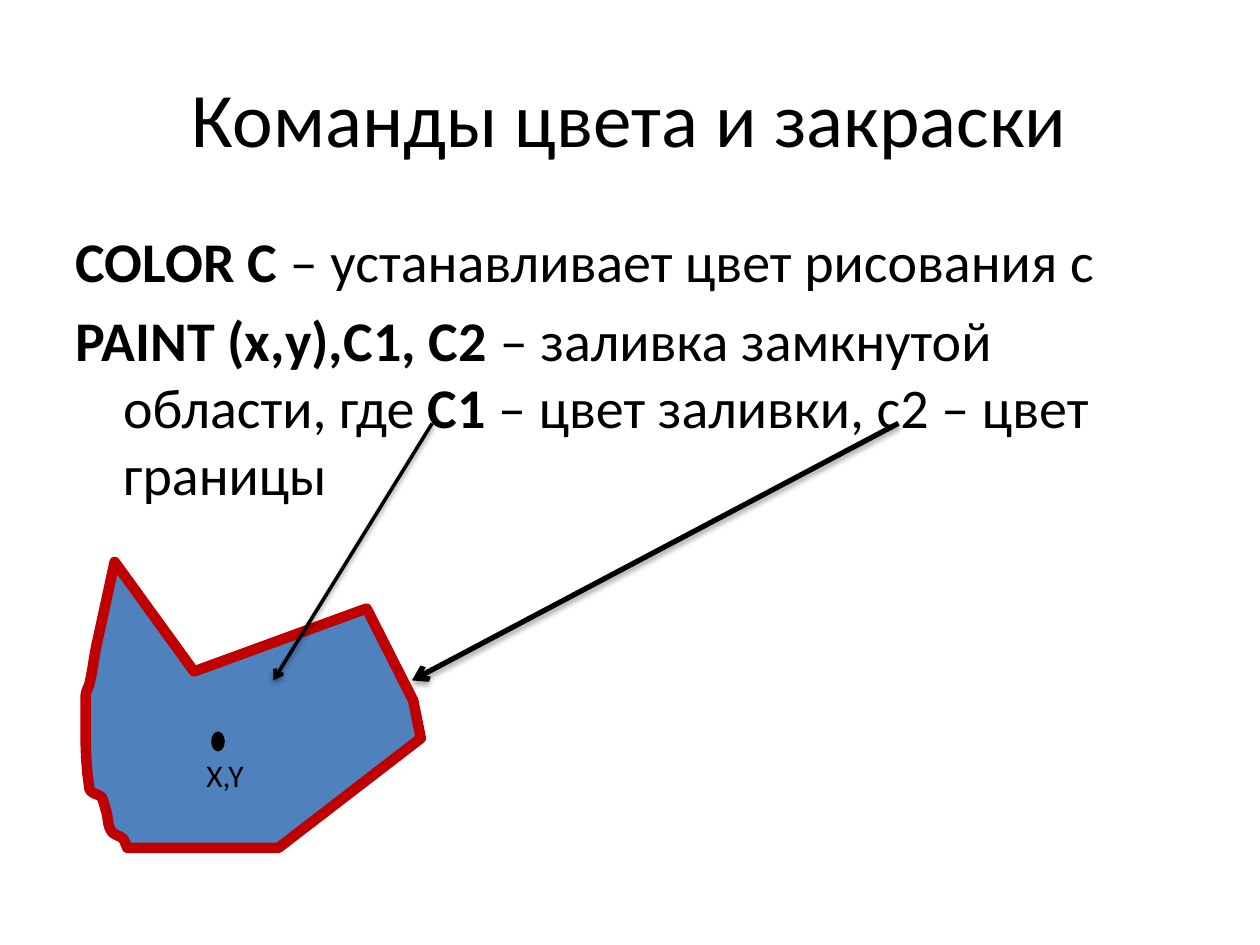
from lxml import etree
from pptx import Presentation
from pptx.dml.color import RGBColor
from pptx.enum.shapes import MSO_CONNECTOR, MSO_SHAPE
from pptx.enum.text import MSO_ANCHOR, PP_ALIGN
from pptx.oxml.ns import qn
from pptx.util import Inches, Pt

STRAIGHT = MSO_CONNECTOR.STRAIGHT
OVAL = MSO_SHAPE.OVAL
TOP, MIDDLE = MSO_ANCHOR.TOP, MSO_ANCHOR.MIDDLE
LEFT, CENTER = PP_ALIGN.LEFT, PP_ALIGN.CENTER

COLORS = {"ink": "000000", "area": "4F81BD", "border": "C00000"}
FONT = "Calibri"

TITLE = [[("Команды цвета и закраски", False)]]
COMMANDS = [
    [("COLOR C ", True), ("– устанавливает цвет рисования c", False)],
    [("PAINT (x,y),C1, C2 ", True), ("– заливка замкнутой области, где ", False),
     ("С1", True), (" – цвет заливки, c2 – цвет границы", False)],
]
POINT_LABEL = [[("X,Y", False)]]

AREA_START = (0.78, 5.06)
AREA_CURVES = [
    ((0.75, 5.18), (0.74, 5.3), (0.71, 5.43)),
    ((0.7, 5.46), (0.68, 5.49), (0.68, 5.53)),
    ((0.68, 5.77), (0.67, 6.02), (0.71, 6.26)),
    ((0.72, 6.3), (0.78, 6.3), (0.81, 6.33)),
    ((0.82, 6.36), (0.83, 6.39), (0.84, 6.43)),
    ((0.86, 6.48), (0.85, 6.54), (0.88, 6.59)),
    ((0.9, 6.63), (0.95, 6.63), (0.98, 6.66)),
    ((0.99, 6.68), (1, 6.7), (1.01, 6.73)),
]
AREA_CORNERS = [(2.21, 6.73), (3.34, 5.86), (3.28, 5.56),
                (2.91, 4.83), (1.54, 5.33), (0.91, 4.46)]


def curve_points(start, curves, steps=6):
    """Return points along a chain of cubic Bezier curves."""
    points = []
    for b, c, end in curves:
        for i in range(1, steps + 1):
            t = i / steps
            u = 1 - t
            weights = (u ** 3, 3 * u * u * t, 3 * u * t * t, t ** 3)
            points.append(tuple(sum(w * q[axis] for w, q in zip(weights, (start, b, c, end)))
                                for axis in (0, 1)))
        start = end
    return points


class SlideBuilder:
    """Holds the style and the current slide, and adds elements to it."""

    def __init__(self, slide, font, colors):
        self.s = slide
        self.font = font
        self.colors = colors

    def color(self, name):
        return RGBColor.from_string(self.colors[name])

    def paint(self, sp, fill, line, width):
        sp.shadow.inherit = False
        sp.fill.solid()
        sp.fill.fore_color.rgb = self.color(fill)
        sp.line.color.rgb = self.color(line)
        sp.line.width = Pt(width)

    def text(self, box, paragraphs, size, align=LEFT, anchor=TOP, hanging=0, gap=0):
        tf = self.s.shapes.add_textbox(*map(Inches, box)).text_frame
        tf.word_wrap = True
        tf.vertical_anchor = anchor
        for i, runs in enumerate(paragraphs):
            p = tf.add_paragraph() if i else tf.paragraphs[0]
            p.alignment = align
            if i:
                p.space_before = Pt(gap)
            if hanging:
                pPr = p._p.get_or_add_pPr()
                pPr.set("marL", str(Inches(hanging)))
                pPr.set("indent", str(-Inches(hanging)))
            for words, bold in runs:
                r = p.add_run()
                r.text = words
                r.font.name = self.font
                r.font.size = Pt(size)
                r.font.bold = bold
                r.font.color.rgb = self.color("ink")

    def outline(self, start, points, fill, line, width):
        builder = self.s.shapes.build_freeform(*map(Inches, start))
        builder.add_line_segments([(Inches(x), Inches(y)) for x, y in points], close=True)
        self.paint(builder.convert_to_shape(), fill, line, width)

    def dot(self, box, color, width):
        sp = self.s.shapes.add_shape(OVAL, *map(Inches, box))
        self.paint(sp, color, color, width)

    def arrow(self, start, end, width, distance, opacity):
        sp = self.s.shapes.add_connector(STRAIGHT, *map(Inches, start + end))
        sp.line.color.rgb = self.color("ink")
        sp.line.width = Pt(width)
        etree.SubElement(sp.line._get_or_add_ln(), qn("a:tailEnd"), type="arrow")
        effects = etree.SubElement(sp._element.spPr, qn("a:effectLst"))
        shadow = etree.SubElement(effects, qn("a:outerShdw"), blurRad=str(Pt(3.1)),
                                  dist=str(Pt(distance)), dir="5400000", rotWithShape="0")
        tint = etree.SubElement(shadow, qn("a:srgbClr"), val=self.colors["ink"])
        etree.SubElement(tint, qn("a:alpha"), val=str(opacity * 1000))


def main():
    prs = Presentation()
    prs.slide_width, prs.slide_height = Inches(10), Inches(7.5)
    s = SlideBuilder(prs.slides.add_slide(prs.slide_layouts[6]), FONT, COLORS)
    s.text((0.5, 0.3, 9, 1.25), TITLE, 44, align=CENTER, anchor=MIDDLE)
    s.text((0.5, 1.75, 9, 2.47), COMMANDS, 32, hanging=0.38, gap=6.4)
    s.outline(AREA_START, curve_points(AREA_START, AREA_CURVES) + AREA_CORNERS,
              "area", "border", 6)
    s.arrow((3.43, 3.36), (2.17, 5.4), 2, 1.6, 38)
    s.arrow((7.13, 3.36), (3.27, 5.4), 3, 1.8, 35)
    s.dot((1.69, 5.82, 0.08, 0.13), "ink", 2)
    s.text((1.54, 5.95, 0.63, 0.4), POINT_LABEL, 18)
    prs.save("out.pptx")


if __name__ == "__main__":
    main()
